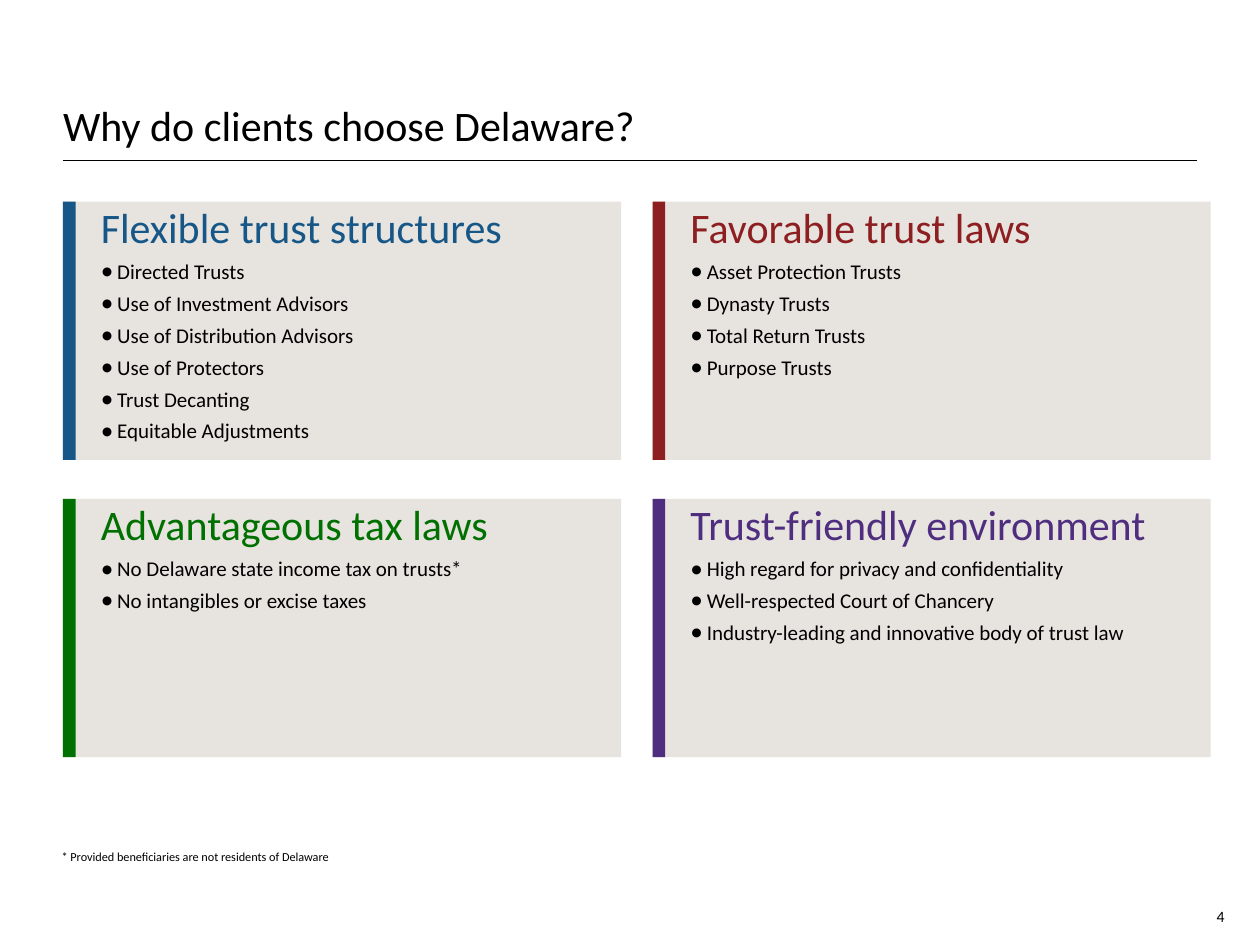
from lxml import etree
from pptx import Presentation
from pptx import util as u
from pptx.dml.color import RGBColor
from pptx.enum import shapes, text
from pptx.oxml import ns

BLACK = RGBColor(0x00, 0x00, 0x00)
SAND = RGBColor(0xE7, 0xE3, 0xDF)
BLUE = RGBColor(0x16, 0x57, 0x88)
RED = RGBColor(0x8D, 0x1F, 0x21)
GREEN = RGBColor(0x00, 0x70, 0x00)
PURPLE = RGBColor(0x4F, 0x2D, 0x7F)

WIDTH, HEIGHT = 10, 7.5
MARGIN = 0.5
GRID_TOP = 1.6
COLUMN_STEP, ROW_STEP = 4.68, 2.36
CARD_WIDTH, CARD_HEIGHT = 4.43, 2.05
BAR_WIDTH = 0.1
COLUMNS = 2

CARDS = [
    ("Flexible trust structures", BLUE, [
        "Directed Trusts", "Use of Investment Advisors",
        "Use of Distribution Advisors", "Use of Protectors",
        "Trust Decanting", "Equitable Adjustments"]),
    ("Favorable trust laws", RED, [
        "Asset Protection Trusts", "Dynasty Trusts",
        "Total Return Trusts", "Purpose Trusts"]),
    ("Advantageous tax laws", GREEN, [
        "No Delaware state income tax on trusts*",
        "No intangibles or excise taxes"]),
    ("Trust-friendly environment", PURPLE, [
        "High regard for privacy and confidentiality",
        "Well-respected Court of Chancery",
        "Industry-leading and innovative body of trust law"]),
]


def inches(*lengths):
    return [u.Inches(length) for length in lengths]


def set_all(target, values):
    for name, value in values.items():
        setattr(target, name, value)


def format_frame(frame, anchor, insets=(0, 0, 0, 0)):
    left, top, right, bottom = inches(*insets)
    set_all(frame, {
        "word_wrap": True, "auto_size": text.MSO_AUTO_SIZE.NONE,
        "vertical_anchor": anchor, "margin_left": left, "margin_top": top,
        "margin_right": right, "margin_bottom": bottom})


def write(para, words, size, color=BLACK, align=text.PP_ALIGN.LEFT):
    para.alignment = align
    span = para.add_run()
    span.text = words
    set_all(span.font, {"name": "Calibri", "size": u.Pt(size)})
    span.font.color.rgb = color


def add_bullet(para):
    para.level = 1
    para.space_before = u.Pt(3.8)
    properties = para._p.get_or_add_pPr()
    indent = u.Inches(0.13)
    properties.set("marL", str(indent))
    properties.set("indent", str(-indent))
    for tag, name, value in (("a:buSzPct", "val", "120000"),
                             ("a:buFont", "typeface", "Calibri"),
                             ("a:buChar", "char", "•")):
        etree.SubElement(properties, ns.qn(tag)).set(name, value)


def add_block(page, box, color):
    block = page.shapes.add_shape(shapes.MSO_SHAPE.RECTANGLE, *inches(*box))
    block.shadow.inherit = False
    block.fill.solid()
    block.fill.fore_color.rgb = color
    block.line.fill.background()
    return block


def add_heading(page, box, words):
    left, top, width, height = box
    title = page.shapes.title
    set_all(title, dict(zip(("left", "top", "width", "height"), inches(*box))))
    format_frame(title.text_frame, text.MSO_ANCHOR.BOTTOM, (0, 0.05, 0, 0.08))
    write(title.text_frame.paragraphs[0], words, 24)
    bottom = top + height
    rule = page.shapes.add_connector(
        shapes.MSO_CONNECTOR.STRAIGHT, *inches(left, bottom, left + width, bottom))
    rule.line.width = u.Pt(0.5)
    rule.line.color.rgb = BLACK
    etree.SubElement(rule._element.spPr, ns.qn("a:effectLst"))


def add_card(page, box, heading, color, items):
    left, top, width, height = box
    frame = add_block(page, box, SAND).text_frame
    format_frame(frame, text.MSO_ANCHOR.TOP, (0.3, 0, 0.3, 0))
    write(frame.paragraphs[0], heading, 24, color)
    for item in items:
        para = frame.add_paragraph()
        add_bullet(para)
        write(para, item, 12)
    add_block(page, (left, top, BAR_WIDTH, height), color)


def add_cards(page, left, top):
    for index, card in enumerate(CARDS):
        row, column = divmod(index, COLUMNS)
        box = (left + column * COLUMN_STEP, top + row * ROW_STEP,
               CARD_WIDTH, CARD_HEIGHT)
        add_card(page, box, *card)


def add_note(page, box, words, size, align=text.PP_ALIGN.LEFT, inset=0):
    frame = page.shapes.add_textbox(*inches(*box)).text_frame
    format_frame(frame, text.MSO_ANCHOR.BOTTOM, (inset, 0, 0, 0))
    write(frame.paragraphs[0], words, size, align=align)


def main():
    deck = Presentation()
    deck.slide_width, deck.slide_height = inches(WIDTH, HEIGHT)
    page = deck.slides.add_slide(deck.slide_layouts[5])
    add_heading(page, (MARGIN, 0.34, WIDTH - 2 * MARGIN, 0.93),
                "Why do clients choose Delaware?")
    add_cards(page, MARGIN, GRID_TOP)
    add_note(page, (0.43, 6.36, 4.66, 0.5),
             "* Provided beneficiaries are not residents of Delaware", 7, inset=0.06)
    add_note(page, (9.33, 7.1, 0.39, 0.25), "4", 9, text.PP_ALIGN.RIGHT)
    deck.save("out.pptx")


if __name__ == "__main__":
    main()
